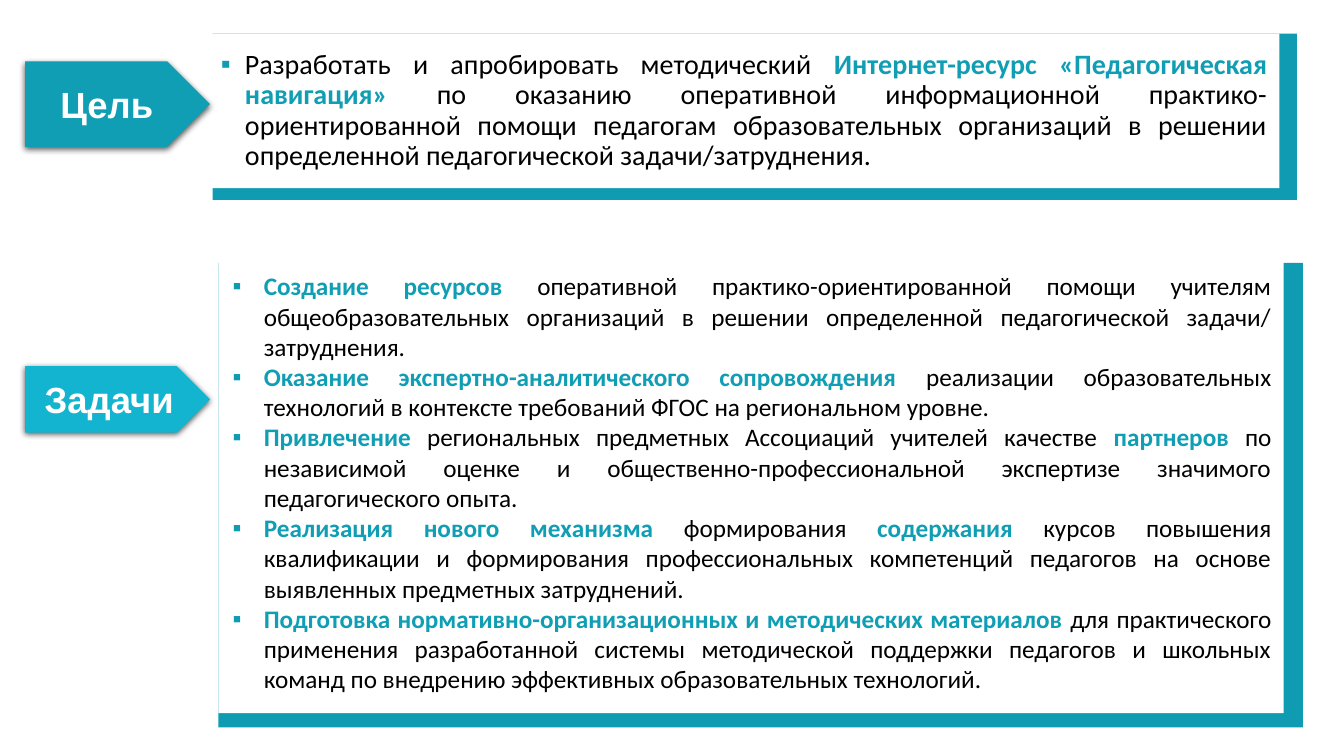
from lxml.etree import SubElement
from pptx import Presentation
from pptx.dml.color import RGBColor
from pptx.enum.shapes import MSO_SHAPE as Preset
from pptx.enum.text import MSO_ANCHOR as Anchor, MSO_AUTO_SIZE as AutoSize, PP_ALIGN as Align
from pptx.oxml.ns import qn
from pptx.util import Emu, Inches, Pt

BAR_TEAL = RGBColor(0x0F, 0x9B, 0xB2)
TEAL = RGBColor(0x10, 0x9E, 0xB4)
BRIGHT_TEAL = RGBColor(0x13, 0xB4, 0xCF)
WHITE = RGBColor(0xFF, 0xFF, 0xFF)
BLACK = RGBColor(0, 0, 0)

# Asterisks enclose the highlighted words
GOAL = [
    "Разработать и апробировать методический *Интернет-ресурс «Педагогическая навигация» *"
    "по оказанию оперативной информационной практико-ориентированной помощи педагогам "
    "образовательных организаций в решении определенной педагогической задачи/затруднения.",
]
TASKS = [
    "*Создание ресурсов* оперативной практико-ориентированной помощи учителям "
    "общеобразовательных организаций в решении определенной педагогической задачи/ затруднения.",
    "*Оказание экспертно-аналитического сопровождения* реализации образовательных "
    "технологий в контексте требований ФГОС на региональном уровне.",
    "*Привлечение* региональных предметных Ассоциаций учителей качестве *партнеров* по "
    "независимой оценке и общественно-профессиональной экспертизе значимого "
    "педагогического опыта.",
    "*Реализация нового механизма* формирования *содержания* курсов повышения "
    "квалификации и формирования профессиональных компетенций педагогов на основе "
    "выявленных предметных затруднений.",
    "*Подготовка нормативно-организационных и методических материалов *для практического "
    "применения разработанной системы методической поддержки педагогов и школьных "
    "команд по внедрению эффективных образовательных технологий.",
]


class GoalSlide:
    """Places elements on a grid of 160 columns by 90 rows."""
    columns, rows = 160, 90
    list_font, label_font, label_size = "Calibri", "Arial", Pt(26)

    def __init__(self, presentation):
        self.cell_width = presentation.slide_width / self.columns
        self.cell_height = presentation.slide_height / self.rows
        self.slide = presentation.slides.add_slide(presentation.slide_layouts[3])
        title = self.slide.shapes.title.element
        title.getparent().remove(title)

    def place(self, left, top, width, height):
        return (Emu(round(left * self.cell_width)), Emu(round(top * self.cell_height)),
                Emu(round(width * self.cell_width)), Emu(round(height * self.cell_height)))

    def block(self, preset, area, color):
        shape = self.slide.shapes.add_shape(preset, *self.place(*area))
        shape.shadow.inherit = False
        shape.fill.solid()
        shape.fill.fore_color.rgb = color
        shape.line.fill.background()
        return shape

    def arrow_label(self, text, area, color):
        shape = self.block(Preset.PENTAGON, area, color)
        effects = shape.element.spPr.find(qn("a:effectLst"))
        shadow = SubElement(effects, qn("a:outerShdw"), blurRad=str(Pt(4.5)),
                            dist=str(Pt(1.5)), dir="5400000", rotWithShape="0")
        shadow_color = SubElement(shadow, qn("a:srgbClr"), val=str(BLACK))
        SubElement(shadow_color, qn("a:alpha"), val="63000")
        frame = shape.text_frame
        frame.vertical_anchor = Anchor.MIDDLE
        paragraph = frame.paragraphs[0]
        paragraph.text = text
        paragraph.alignment = Align.CENTER
        font = paragraph.font
        font.name, font.size, font.bold = self.label_font, self.label_size, True
        font.color.rgb = WHITE

    def bullet(self, paragraph, indent):
        properties = paragraph._p.get_or_add_pPr()
        properties.set("marL", str(indent))
        properties.set("indent", str(-indent))
        bullet_color = SubElement(properties, qn("a:buClr"))
        SubElement(bullet_color, qn("a:srgbClr"), val=str(BAR_TEAL))
        SubElement(properties, qn("a:buFont"), typeface=self.label_font)
        SubElement(properties, qn("a:buChar"), char="▪")

    def body_list(self, index, items, area, size, indent, line_spacing, top_inset):
        body = self.slide.placeholders[index]
        body.left, body.top, body.width, body.height = self.place(*area)
        body.fill.solid()
        body.fill.fore_color.rgb = WHITE
        # Bring the list in front of its teal panel
        body.element.getparent().append(body.element)
        frame = body.text_frame
        frame.word_wrap, frame.auto_size = True, AutoSize.NONE
        frame.vertical_anchor = Anchor.MIDDLE
        frame.margin_left, frame.margin_top = Inches(0.14), top_inset
        frame.margin_right = frame.margin_bottom = Inches(0.12)
        for number, item in enumerate(items):
            paragraph = frame.add_paragraph() if number else frame.paragraphs[0]
            self.bullet(paragraph, indent)
            paragraph.alignment = Align.JUSTIFY
            paragraph.line_spacing = line_spacing
            paragraph.space_before = paragraph.space_after = Pt(0)
            paragraph.font.name, paragraph.font.size = self.list_font, size
            for position, text in enumerate(item.split("*")):
                if text:
                    run = paragraph.add_run()
                    run.text = text
                    run.font.bold = position % 2 == 1
                    run.font.color.rgb = TEAL if run.font.bold else BLACK


def main():
    presentation = Presentation()
    presentation.slide_width, presentation.slide_height = Inches(13.33), Inches(7.5)
    page = GoalSlide(presentation)

    # Goal
    page.block(Preset.RECTANGLE, (25.3, 4, 129.1, 19.8), BAR_TEAL)
    page.body_list(1, GOAL, (24.6, 4, 127.7, 18.4), Pt(20), Inches(0.24), 0.9, Inches(0.12))
    page.arrow_label("Цель", (3, 7.3, 22, 10.2), TEAL)

    # Tasks
    page.block(Preset.RECTANGLE, (26, 31.3, 129.1, 55.3), BAR_TEAL)
    page.body_list(2, TASKS, (26, 28, 126.8, 56.9), Pt(18), Inches(0.31), 1.0, Inches(0.28))
    page.arrow_label("Задачи", (3, 43.6, 22, 7.9), BRIGHT_TEAL)

    presentation.save("out.pptx")


if __name__ == "__main__":
    main()
